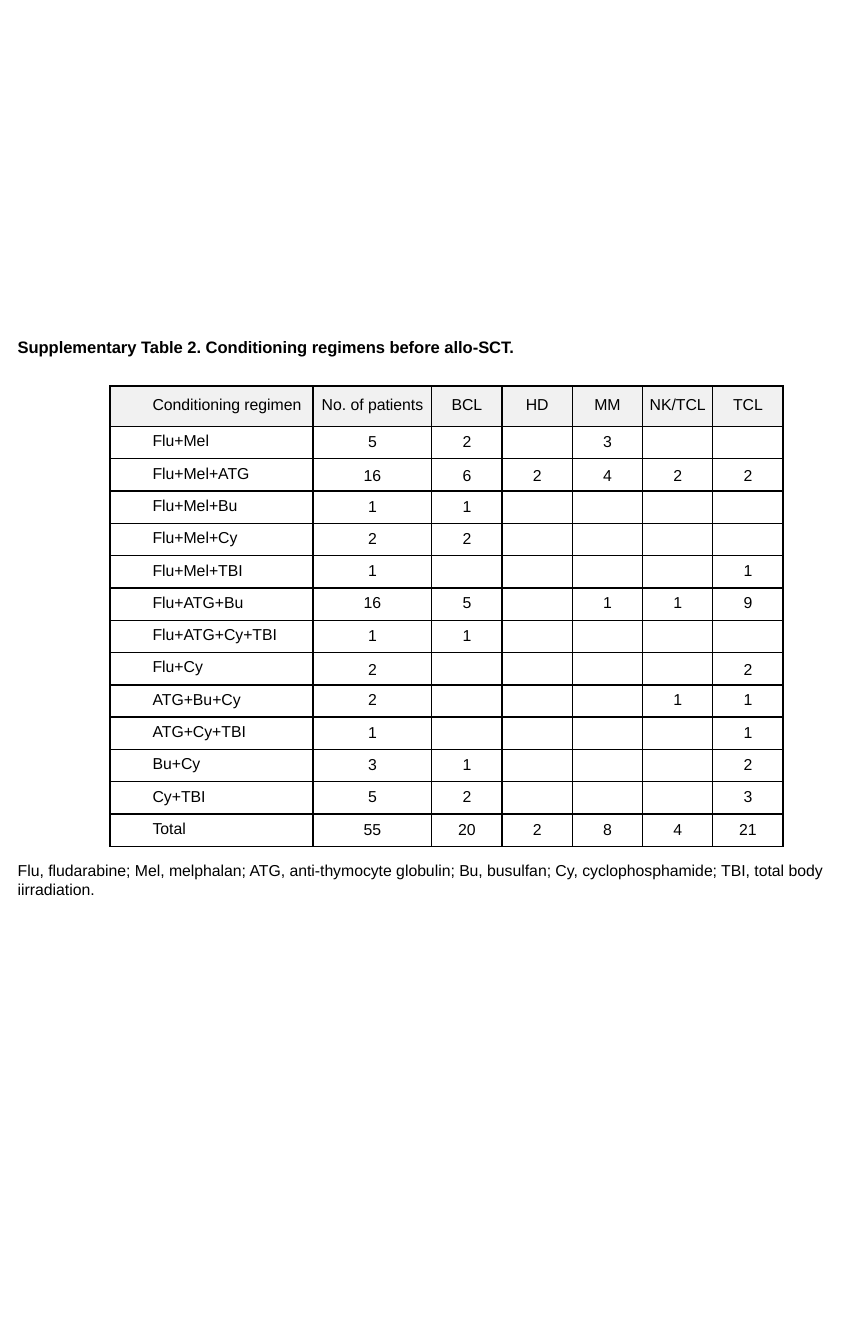
from dataclasses import dataclass

from lxml.etree import SubElement
from pptx import Presentation
from pptx.dml.color import RGBColor
from pptx.enum.text import MSO_ANCHOR, PP_ALIGN
from pptx.oxml import parse_xml
from pptx.oxml.ns import nsdecls, qn
from pptx.util import Pt

# Content
CAPTION = "Supplementary Table 2. Conditioning regimens before allo-SCT."
HEADINGS = ("Conditioning regimen", "No. of patients", "BCL", "HD", "MM", "NK/TCL", "TCL")
REGIMENS = [
    ("Flu+Mel", 5, 2, "", 3, "", ""),
    ("Flu+Mel+ATG", 16, 6, 2, 4, 2, 2),
    ("Flu+Mel+Bu", 1, 1, "", "", "", ""),
    ("Flu+Mel+Cy", 2, 2, "", "", "", ""),
    ("Flu+Mel+TBI", 1, "", "", "", "", 1),
    ("Flu+ATG+Bu", 16, 5, "", 1, 1, 9),
    ("Flu+ATG+Cy+TBI", 1, 1, "", "", "", ""),
    ("Flu+Cy", 2, "", "", "", "", 2),
    ("ATG+Bu+Cy", 2, "", "", "", 1, 1),
    ("ATG+Cy+TBI", 1, "", "", "", "", 1),
    ("Bu+Cy", 3, 1, "", "", "", 2),
    ("Cy+TBI", 5, 2, "", "", "", 3),
    ("Total", 55, 20, 2, 8, 4, 21),
]
LOOSE_REGIMENS = {"Flu+Mel+ATG", "Flu+Cy"}  # counts set with wider line spacing
FOOTNOTE = (
    "Flu, fludarabine; Mel, melphalan; ATG, anti-thymocyte globulin; Bu, busulfan; "
    "Cy, cyclophosphamide; TBI, total body iirradiation."
)


@dataclass(frozen=True)
class Theme:
    font: str = "Arial"
    ink: str = "000000"
    header_fill: str = "F1F1F1"
    body_fill: str = "FFFFFF"
    caption_size: float = 10.5
    text_size: float = 10
    tight: float = 0.8
    loose: float = 1.07
    space_after: float = 8
    border: float = 1


THEME = Theme()

# Layout in points
SLIDE_SIZE = (540, 850.38)
CAPTION_BOX = (4.1, 212, 518.4, 18)
FOOTNOTE_BOX = (4.1, 541.1, 543.6, 31.68)
TABLE_LEFT, TABLE_TOP = 69.6, 244.2
COLUMN_WIDTHS = [128.6, 75.2] + [44.5] * 5
ROW_HEIGHTS = [25.65] + [20.46] * len(REGIMENS)
REGIMEN_INDENT = 27
COUNT_INSET = 0.72


def add_run(paragraph, text, size, bold=False):
    run = paragraph.add_run()
    run.text = text
    run.font.name = THEME.font
    run.font.size = Pt(size)
    run.font.bold = bold
    run.font.color.rgb = RGBColor.from_string(THEME.ink)


def add_note(slide, box, text, size, bold=False, line_spacing=None):
    frame = slide.shapes.add_textbox(*map(Pt, box)).text_frame
    frame.word_wrap = True
    paragraph = frame.paragraphs[0]
    paragraph.line_spacing = line_spacing
    add_run(paragraph, text, size, bold)


def add_borders(cell):
    properties = cell._tc.get_or_add_tcPr()
    for position, side in enumerate(("lnL", "lnR", "lnT", "lnB")):
        properties.insert(position, parse_xml(
            f'<a:{side} {nsdecls("a")} w="{Pt(THEME.border)}"><a:solidFill>'
            f'<a:srgbClr val="{THEME.ink}"/></a:solidFill></a:{side}>'))


def fill_cell(cell, value, is_regimen, fill, line_spacing):
    cell.fill.solid()
    cell.fill.fore_color.rgb = RGBColor.from_string(fill)
    add_borders(cell)
    cell.vertical_anchor = MSO_ANCHOR.MIDDLE
    inset = Pt(0 if is_regimen else COUNT_INSET)
    cell.margin_left = cell.margin_right = cell.margin_top = inset
    cell.margin_bottom = 0
    paragraph = cell.text_frame.paragraphs[0]
    if value == "":
        SubElement(paragraph._p, qn("a:endParaRPr"), sz=str(THEME.text_size * 100))
        return
    paragraph.line_spacing = line_spacing
    paragraph.space_after = Pt(THEME.space_after)
    if is_regimen:
        paragraph._p.get_or_add_pPr().set("marL", str(Pt(REGIMEN_INDENT)))
    else:
        paragraph.alignment = PP_ALIGN.CENTER
    add_run(paragraph, str(value), THEME.text_size)


def add_regimen_table(slide):
    rows = [HEADINGS, *REGIMENS]
    table = slide.shapes.add_table(
        len(rows), len(HEADINGS), Pt(TABLE_LEFT), Pt(TABLE_TOP),
        Pt(sum(COLUMN_WIDTHS)), Pt(sum(ROW_HEIGHTS))).table
    table.horz_banding = False
    for column, width in zip(table.columns, COLUMN_WIDTHS):
        column.width = Pt(width)
    for r, (values, height) in enumerate(zip(rows, ROW_HEIGHTS)):
        table.rows[r].height = Pt(height)
        fill = THEME.body_fill if r else THEME.header_fill
        count_spacing = THEME.loose if values[0] in LOOSE_REGIMENS else THEME.tight
        for c, value in enumerate(values):
            spacing = count_spacing if c else THEME.tight
            fill_cell(table.cell(r, c), value, c == 0, fill, spacing)


def main():
    deck = Presentation()
    deck.slide_width, deck.slide_height = map(Pt, SLIDE_SIZE)
    slide = deck.slides.add_slide(deck.slide_layouts[6])
    # Footnote, table and caption
    add_note(slide, FOOTNOTE_BOX, FOOTNOTE, THEME.text_size)
    add_regimen_table(slide)
    add_note(slide, CAPTION_BOX, CAPTION, THEME.caption_size, True, THEME.tight)
    deck.save("out.pptx")


if __name__ == "__main__":
    main()
